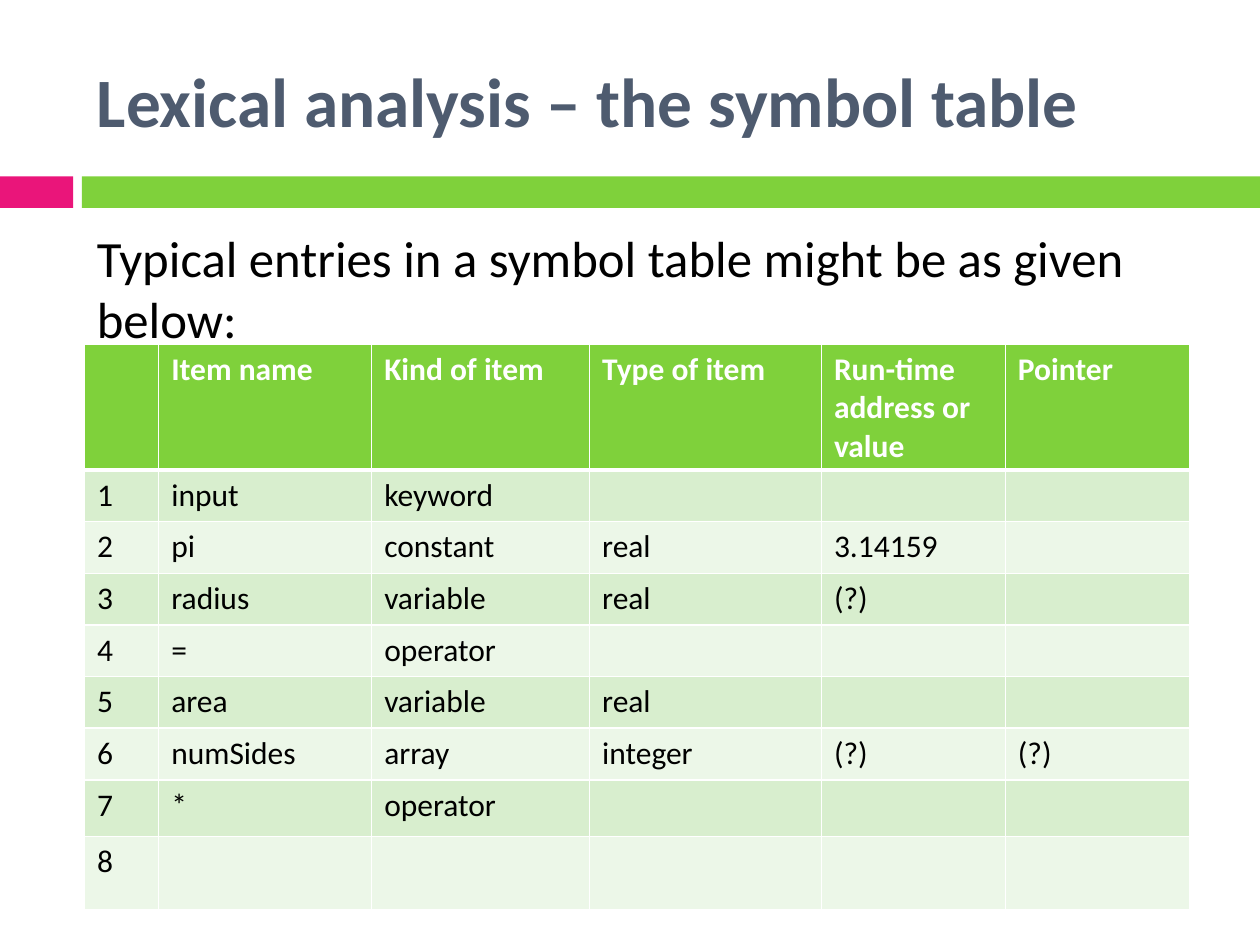
from lxml import etree
from pptx import Presentation
from pptx.dml.color import RGBColor
from pptx.enum import shapes, text
from pptx.oxml.ns import qn
from pptx.util import Inches, Pt

COLORS = {
    "pink": "EA157A", "green": "7FD13B", "slate": "4E5B6F", "black": "000000",
    "white": "FFFFFF", "odd": "D8EECE", "even": "ECF7E8",
}
FONT = "Calibri"
HEADING = "Lexical analysis – the symbol table"
INTRO = "Typical entries in a symbol table might be as given below:"
BANDS = [("pink", 0, 0.58), ("green", 0.65, 9.35)]
HEADER = ["", "Item name", "Kind of item", "Type of item",
          "Run-time address or value", "Pointer"]
SYMBOLS = [
    ("input", "keyword", "", "", ""),
    ("pi", "constant", "real", "3.14159", ""),
    ("radius", "variable", "real", "(?)", ""),
    ("=", "operator", "", "", ""),
    ("area", "variable", "real", "", ""),
    ("numSides", "array", "integer", "(?)", "(?)"),
    ("*", "operator", "", "", ""),
    ("", "", "", "", ""),
]
COLUMN_WIDTHS = [0.59, 1.69, 1.73, 1.84, 1.46, 1.46]
ROW_HEIGHTS = [1.0] + [0.41] * 6 + [0.45, 0.58]
LEFT = 0.67


def rgb(name):
    return RGBColor.from_string(COLORS[name])


def write(frame, words, size, color, bold=False):
    frame.text = words
    for run in frame.paragraphs[0].runs:
        run.font.name = FONT
        run.font.size = Pt(size)
        run.font.bold = bold
        run.font.color.rgb = rgb(color)


def add_text(slide, top, height, anchor, *style):
    box = slide.shapes.add_textbox(Inches(LEFT), Inches(top), Inches(8.92), Inches(height))
    frame = box.text_frame
    frame.word_wrap = True
    frame.vertical_anchor = anchor
    write(frame, *style)
    return frame


def add_borders(cell, bottom, top):
    properties = cell._tc.get_or_add_tcPr()
    for side, width in (("L", 1), ("R", 1), ("T", top), ("B", bottom)):
        line = etree.SubElement(properties, qn(f"a:ln{side}"), w=str(Pt(width)))
        fill = etree.SubElement(line, qn("a:solidFill"))
        etree.SubElement(fill, qn("a:srgbClr"), val=COLORS["white"])


def add_symbol_table(slide):
    entries = [HEADER] + [(str(n), *symbol) for n, symbol in enumerate(SYMBOLS, 1)]
    table = slide.shapes.add_table(
        len(entries), len(HEADER), Inches(LEFT), Inches(2.73),
        Inches(sum(COLUMN_WIDTHS)), Inches(sum(ROW_HEIGHTS))).table
    for column, width in zip(table.columns, COLUMN_WIDTHS):
        column.width = Inches(width)
    for index, (row, height, entry) in enumerate(zip(table.rows, ROW_HEIGHTS, entries)):
        row.height = Inches(height)
        is_header = index == 0
        shade = "green" if is_header else "odd" if index % 2 else "even"
        for cell, words in zip(row.cells, entry):
            add_borders(cell, 3 if is_header else 1, 3 if index == 1 else 1)
            cell.fill.solid()
            cell.fill.fore_color.rgb = rgb(shade)
            write(cell.text_frame, words, 18, "white" if is_header else "black", is_header)


def main():
    deck = Presentation()
    deck.slide_width, deck.slide_height = Inches(10), Inches(7.5)
    slide = deck.slides.add_slide(deck.slide_layouts[6])
    for color, left, width in BANDS:
        band = slide.shapes.add_shape(
            shapes.MSO_SHAPE.RECTANGLE, Inches(left), Inches(1.4), Inches(width), Inches(0.25))
        band.shadow.inherit = False
        band.fill.solid()
        band.fill.fore_color.rgb = rgb(color)
        band.line.fill.background()
    add_text(slide, 0.25, 1.08, text.MSO_ANCHOR.MIDDLE, HEADING, 39.6, "slate", True)
    intro = add_text(slide, 1.75, 5.46, text.MSO_ANCHOR.TOP, INTRO, 29, "black")
    intro.paragraphs[0].space_before = Pt(7)
    add_symbol_table(slide)
    deck.save("out.pptx")


if __name__ == "__main__":
    main()
